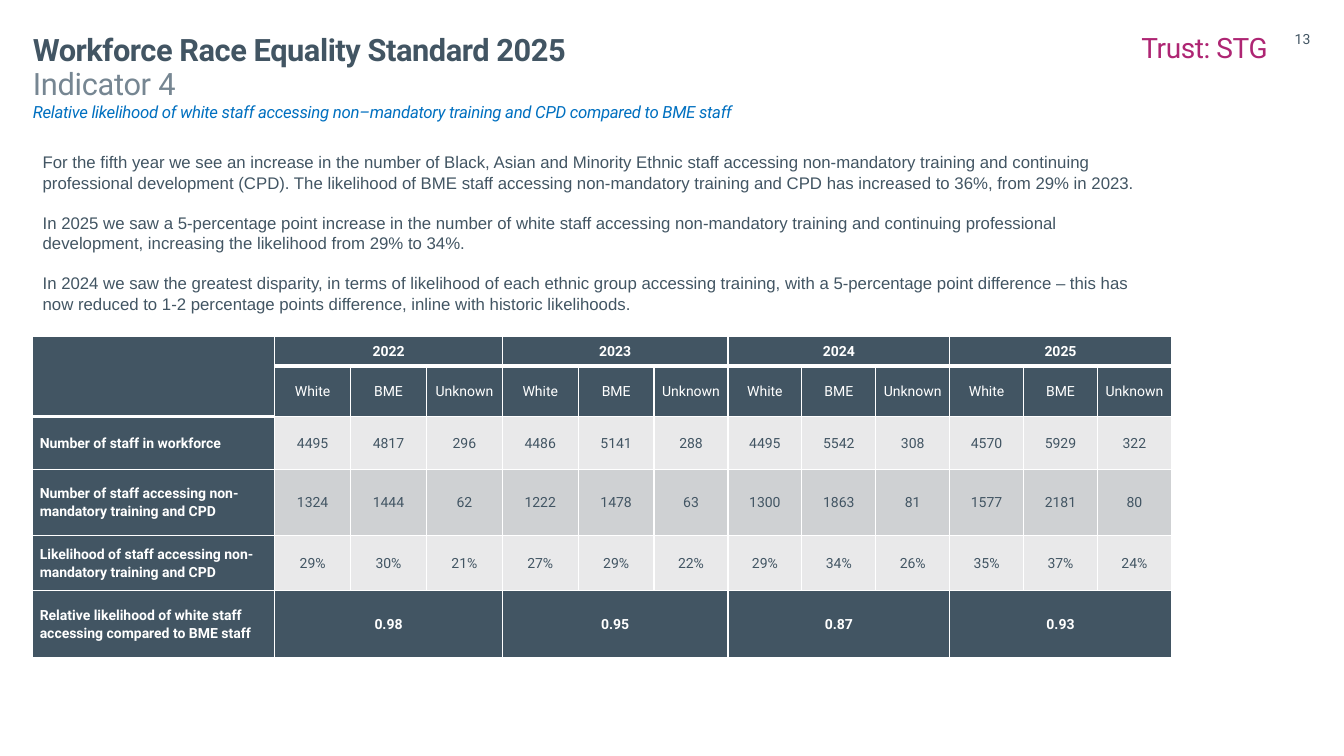
from dataclasses import dataclass

from lxml.etree import SubElement
from pptx import Presentation
from pptx.dml.color import RGBColor
from pptx.enum.text import MSO_ANCHOR, MSO_AUTO_SIZE, PP_ALIGN
from pptx.oxml.ns import qn
from pptx.util import Pt

SLATE = "425563"
WHITE = "FFFFFF"
LIGHT = "E9E9EA"
MID = "CFD1D3"
LEFT, MIDDLE, RIGHT = PP_ALIGN.LEFT, PP_ALIGN.CENTER, PP_ALIGN.RIGHT


@dataclass
class Style:
    size: float
    color: str
    bold: bool = False
    italic: bool = False
    font: str = "Roboto"
    track: int = 0


@dataclass
class Line:
    text: str
    style: Style


@dataclass
class Box:
    left: float
    top: float
    width: float
    height: float
    lines: list[Line]
    align: PP_ALIGN = LEFT
    pad: tuple[float, float] = (0, 0)
    pitch: float | None = None
    gap: float = 0


@dataclass
class Row:
    height: float
    label: str
    values: list[str]
    fill: str
    bold: bool = False


def rgb(code: str) -> RGBColor:
    return RGBColor.from_string(code)


def write(para, text: str, style: Style) -> None:
    run = para.add_run()
    run.text = text
    font = run.font
    font.name, font.size = style.font, Pt(style.size)
    font.bold, font.italic = style.bold, style.italic
    font.color.rgb = rgb(style.color)
    if style.track:
        run._r.get_or_add_rPr().set("spc", str(style.track))


def place(shape, box: Box) -> None:
    shape.left, shape.top = Pt(box.left), Pt(box.top)
    shape.width, shape.height = Pt(box.width), Pt(box.height)
    frame = shape.text_frame
    frame.word_wrap = True
    frame.auto_size = MSO_AUTO_SIZE.NONE
    frame.vertical_anchor = MSO_ANCHOR.TOP
    frame.margin_left = frame.margin_right = Pt(box.pad[0])
    frame.margin_top = frame.margin_bottom = Pt(box.pad[1])
    for i, line in enumerate(box.lines):
        para = frame.add_paragraph() if i else frame.paragraphs[0]
        para.alignment = box.align
        para.line_spacing = Pt(box.pitch) if box.pitch else 1.0
        para.space_before = Pt(box.gap if i else 0)
        write(para, line.text, line.style)


def edge(cell, side: str, width: float) -> None:
    props = cell._tc.get_or_add_tcPr()
    line = SubElement(props, qn(f"a:{side}"), w=str(Pt(width)))
    fill = SubElement(line, qn("a:solidFill"))
    SubElement(fill, qn("a:srgbClr"), val=WHITE)


def paint(cell, fill: str, top: float, base: float) -> None:
    for side, width in (("lnL", 1), ("lnR", 1), ("lnT", top), ("lnB", base)):
        edge(cell, side, width)
    cell.fill.solid()
    cell.fill.fore_color.rgb = rgb(fill)
    cell.vertical_anchor = MSO_ANCHOR.MIDDLE
    cell.margin_left = cell.margin_right = Pt(5)
    cell.margin_top = cell.margin_bottom = 0


def enter(cell, text: str, style: Style, align: PP_ALIGN) -> None:
    para = cell.text_frame.paragraphs[0]
    para.alignment = align
    para.line_spacing = 1.07
    para.space_after = Pt(8)
    if text:
        write(para, text, style)
    else:
        para._p.get_or_add_endParaRPr().set("sz", "1000")


def spread(values: list[str]) -> list[str]:
    return [text for value in values for text in (value, "", "")]


def draw(slide, rows: list[Row], widths: list[float]) -> None:
    frame = slide.shapes.add_table(len(rows), len(widths), Pt(23.4), Pt(240.6),
                                   Pt(sum(widths)), Pt(sum(r.height for r in rows)))
    table = frame.table
    for col, width in zip(table.columns, widths):
        col.width = Pt(width)
    for r, row in enumerate(rows):
        table.rows[r].height = Pt(row.height)
        for c, text in enumerate([row.label] + row.values):
            cell = table.cell(r, c)
            heavy = 2 if c == 0 else 1
            paint(cell, row.fill if c else SLATE,
                  3 if r == heavy else 1,
                  3 if r == heavy - 1 or r == 0 else 1)
            ink = WHITE if c == 0 or row.fill == SLATE else SLATE
            enter(cell, text, Style(10, ink, row.bold or c == 0), MIDDLE if c else LEFT)
    table.cell(0, 0).merge(table.cell(1, 0))
    for r in (0, len(rows) - 1):
        for c in range(1, len(widths), 3):
            table.cell(r, c).merge(table.cell(r, c + 2))


BODY = Style(12, SLATE, font="Arial")
TITLE = Box(23.4, 21.6, 505, 24.5, [
    Line("Workforce Race Equality Standard 2025", Style(22, SLATE, bold=True, track=-30))])
BOXES = [
    Box(912, 21.6, 24, 18, [Line("13", Style(10, SLATE))], RIGHT),
    Box(23.4, 46.1, 625, 54.7, [
        Line("Indicator 4", Style(22, "768692", track=-20)),
        Line("Relative likelihood of white staff accessing non–mandatory training and CPD "
             "compared to BME staff", Style(12, "0070C0", italic=True, track=-20))]),
    Box(23.4, 105.1, 799.2, 138.2, [
        Line("For the fifth year we see an increase in the number of Black, Asian and Minority "
             "Ethnic staff accessing non-mandatory training and continuing professional "
             "development (CPD). The likelihood of BME staff accessing non-mandatory training "
             "and CPD has increased to 36%, from 29% in 2023.", BODY),
        Line("In 2025 we saw a 5-percentage point increase in the number of white staff "
             "accessing non-mandatory training and continuing professional development, "
             "increasing the likelihood from 29% to 34%.", BODY),
        Line("In 2024 we saw the greatest disparity, in terms of likelihood of each ethnic "
             "group accessing training, with a 5-percentage point difference – this has now "
             "reduced to 1-2 percentage points difference, inline with historic likelihoods.",
             BODY)], pad=(7.2, 3.6), pitch=14.4, gap=14.4),
    Box(774, 21.6, 131.5, 24.5, [Line("Trust: STG", Style(20, "AE2573", track=-30))], RIGHT),
]
ROWS = [
    Row(20.9, "", spread(["2022", "2023", "2024", "2025"]), SLATE, True),
    Row(36, "", ["White", "BME", "Unknown"] * 4, SLATE),
    Row(37.6, "Number of staff in workforce",
        "4495 4817 296 4486 5141 288 4495 5542 308 4570 5929 322".split(), LIGHT),
    Row(47.5, "Number of staff accessing non-mandatory training and CPD",
        "1324 1444 62 1222 1478 63 1300 1863 81 1577 2181 80".split(), MID),
    Row(39.4, "Likelihood of staff accessing non-mandatory training and CPD",
        "29% 30% 21% 27% 29% 22% 29% 34% 26% 35% 37% 24%".split(), LIGHT),
    Row(47.7, "Relative likelihood of white staff accessing compared to BME staff",
        spread(["0.98", "0.95", "0.87", "0.93"]), SLATE, True),
]


def main() -> None:
    deck = Presentation()
    deck.slide_width, deck.slide_height = Pt(960), Pt(540)
    slide = deck.slides.add_slide(deck.slide_layouts[5])
    place(slide.shapes.title, TITLE)
    draw(slide, ROWS, [172.8] + [54.2] * 5 + [52.8] * 7)
    for box in BOXES:
        place(slide.shapes.add_textbox(0, 0, 0, 0), box)
    deck.save("out.pptx")


if __name__ == "__main__":
    main()
